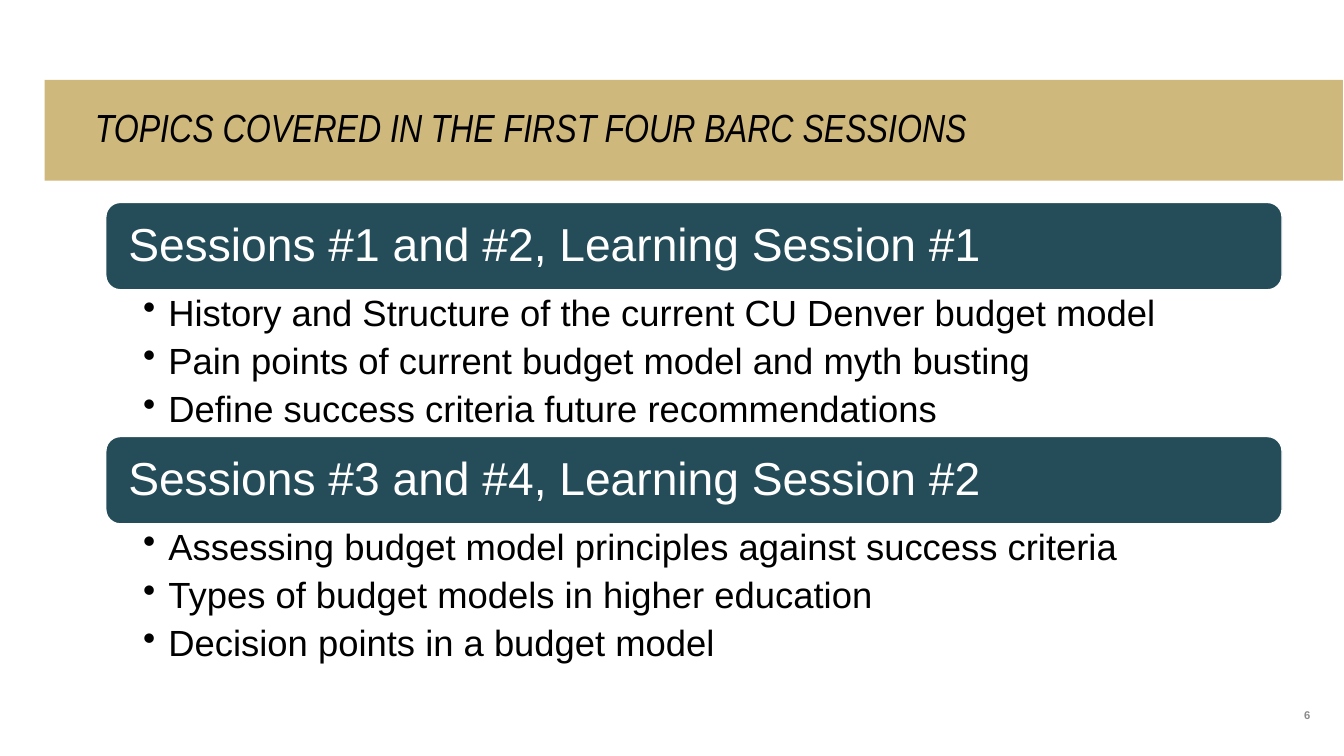
import pptx
import pptx.util
import pptx.dml.color
import pptx.enum.shapes
import pptx.enum.text
import pptx.oxml.ns
import lxml.etree

Pt = pptx.util.Pt
Shape = pptx.enum.shapes.MSO_SHAPE
Anchor = pptx.enum.text.MSO_ANCHOR
Align = pptx.enum.text.PP_ALIGN

GOLD = "CFB87C"
TEAL = "244C59"
WHITE = "FFFFFF"
BLACK = "000000"
GREY = "8C8C8C"

LEFT, WIDTH = 75.6, 840.2
TOP, STEP = 144.6, 167.2
HEAD, BODY = 62.4, 105.2

TOPICS = [
    ("Sessions #1 and #2, Learning Session #1", [
        "History and Structure of the current CU Denver budget model",
        "Pain points of current budget model and myth busting",
        "Define success criteria future recommendations",
    ]),
    ("Sessions #3 and #4, Learning Session #2", [
        "Assessing budget model principles against success criteria",
        "Types of budget models in higher education",
        "Decision points in a budget model",
    ]),
]


def color(code):
    return pptx.dml.color.RGBColor.from_string(code)


def set_frame(shape, anchor, insets):
    frame = shape.text_frame
    frame.word_wrap = True
    frame.vertical_anchor = anchor
    left, top, right, bottom = insets
    frame.margin_left, frame.margin_top = Pt(left), Pt(top)
    frame.margin_right, frame.margin_bottom = Pt(right), Pt(bottom)
    return frame


def set_text(para, text, size, ink, face="Arial", align=Align.LEFT):
    para.text = text
    para.alignment = align
    para.line_spacing = 0.9
    font = para.font
    font.name, font.size = face, Pt(size)
    font.color.rgb = color(ink)
    return font


def add_bullet(para):
    props = para._p.get_or_add_pPr()
    props.set("marL", str(Pt(18)))
    props.set("indent", str(Pt(-18)))
    mark = lxml.etree.SubElement(props, pptx.oxml.ns.qn("a:buChar"))
    mark.set("char", "•")


def add_block(slide, kind, box, fill):
    shape = slide.shapes.add_shape(kind, *map(Pt, box))
    shape.shadow.inherit = False
    shape.fill.solid()
    shape.fill.fore_color.rgb = color(fill)
    shape.line.fill.background()
    return shape


def add_title(slide, text):
    bar = add_block(slide, Shape.RECTANGLE, (31.8, 57, 927.4, 72), GOLD)
    frame = set_frame(bar, Anchor.MIDDLE, (36, 3.6, 72, 3.6))
    font = set_text(frame.paragraphs[0], text, 28, BLACK, "Arial Narrow")
    font.italic = True


def add_header(slide, text, top):
    box = (LEFT, top, WIDTH, HEAD)
    shape = add_block(slide, Shape.ROUNDED_RECTANGLE, box, TEAL)
    shape.line.color.rgb = color(WHITE)
    shape.line.width = Pt(1)
    frame = set_frame(shape, Anchor.MIDDLE, (13, 10, 13, 10))
    set_text(frame.paragraphs[0], text, 33, WHITE)


def add_list(slide, items, top):
    box = slide.shapes.add_textbox(Pt(LEFT), Pt(top), Pt(WIDTH), Pt(BODY))
    frame = set_frame(box, Anchor.TOP, (26.7, 3.6, 18.7, 3.6))
    for index, item in enumerate(items):
        para = frame.add_paragraph() if index else frame.paragraphs[0]
        add_bullet(para)
        set_text(para, item, 26, BLACK)
        para.space_after = Pt(6.3)


def add_number(slide, text):
    box = slide.shapes.add_textbox(Pt(874.8), Pt(479.5), Pt(61.2), Pt(36))
    frame = set_frame(box, Anchor.BOTTOM, (0, 0, 0, 0))
    font = set_text(frame.paragraphs[0], text, 8, GREY, align=Align.RIGHT)
    font.bold = True


def main():
    deck = pptx.Presentation()
    deck.slide_width, deck.slide_height = Pt(960), Pt(540)
    slide = deck.slides.add_slide(deck.slide_layouts[6])
    add_title(slide, "TOPICS COVERED IN THE FIRST FOUR BARC SESSIONS")
    add_number(slide, "6")
    for index, (header, items) in enumerate(TOPICS):
        top = TOP + index * STEP
        add_header(slide, header, top)
        add_list(slide, items, top + HEAD)
    deck.save("out.pptx")


if __name__ == "__main__":
    main()
